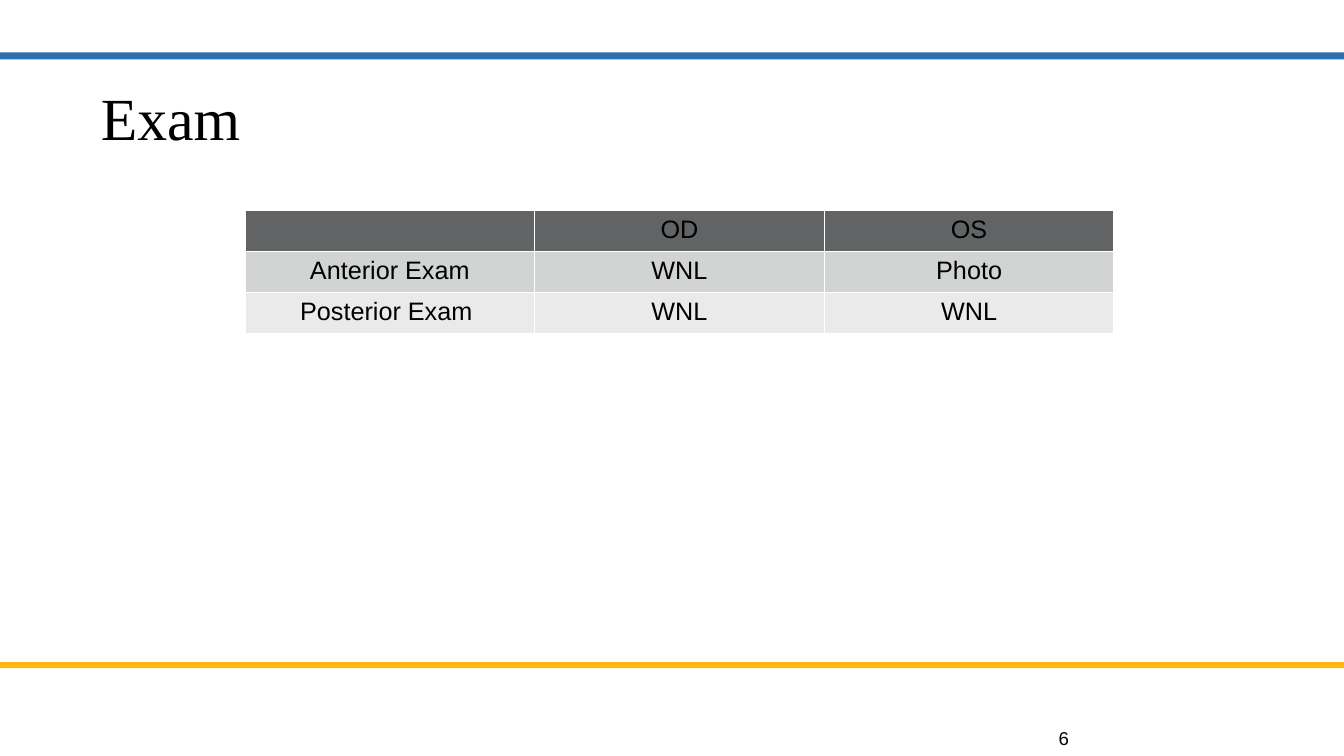
"""Build the Exam slide: two rules, a title, a findings table and a page number."""
import pptx
import pptx.dml.color
import pptx.enum.shapes
import pptx.enum.text
import pptx.oxml
import pptx.oxml.ns
import pptx.util

THEME = {
    "blue": "2B70AE", "gold": "FFB612", "text": "000000", "line": "FFFFFF",
    "rows": ["616365", "D2D3D3", "EAEAEA"],
    "title": {"name": "Times New Roman", "size": pptx.util.Pt(42.7)},
    "body": {"name": "Arial", "size": pptx.util.Pt(18)},
    "number": {"name": "Arial", "size": pptx.util.Pt(13.3)},
}
ANCHOR = pptx.enum.text.MSO_ANCHOR
RGB = pptx.dml.color.RGBColor.from_string


def write(p, text, style):
    r = p.add_run()
    r.text = text
    for name, value in THEME[style].items():
        setattr(r.font, name, value)
    r.font.color.rgb = RGB(THEME["text"])


prs = pptx.Presentation()
prs.slide_width = pptx.util.Inches(13.33)
prs.slide_height = pptx.util.Inches(7.5)
s = prs.slides.add_slide(prs.slide_layouts[6])

for top, height, color in [(6.57, 0.06, "gold"), (0.52, 0.07, "blue")]:
    sp = s.shapes.add_shape(pptx.enum.shapes.MSO_SHAPE.RECTANGLE, 0, pptx.util.Inches(top),
                            prs.slide_width, pptx.util.Inches(height))
    sp.shadow.inherit = False
    sp.fill.solid()
    sp.fill.fore_color.rgb = RGB(THEME[color])
    sp.line.fill.background()

for text, style, anchor, box in [
    ("Exam", "title", ANCHOR.BOTTOM, (1, 0.65, 11.33, 0.86)),
    ("6", "number", ANCHOR.MIDDLE, (10.5, 7.16, 2.67, 0.32)),
]:
    tf = s.shapes.add_textbox(*map(pptx.util.Inches, box)).text_frame
    frame = {"word_wrap": True, "vertical_anchor": anchor, "margin_left": 0,
             "margin_top": 0, "margin_right": 0, "margin_bottom": 0}
    for name, value in frame.items():
        setattr(tf, name, value)
    write(tf.paragraphs[0], text, style)

findings = [
    ["", "OD", "OS"],
    ["Anterior Exam", "WNL", "Photo"],
    ["Posterior Exam ", "WNL", "WNL"],
]
col_width, row_height = pptx.util.Inches(2.873), pptx.util.Inches(0.406)
table = s.shapes.add_table(3, 3, pptx.util.Inches(2.43), pptx.util.Inches(2.09),
                           3 * col_width, 3 * row_height).table
for row, texts, fill in zip(table.rows, findings, THEME["rows"]):
    for cell, text in zip(row.cells, texts):
        cell.fill.solid()
        cell.fill.fore_color.rgb = RGB(fill)
        p = cell.text_frame.paragraphs[0]
        p.alignment = pptx.enum.text.PP_ALIGN.CENTER
        p.font.size = THEME["body"]["size"]
        if text:
            write(p, text, "body")
        tcPr = cell._tc.get_or_add_tcPr()
        for i, side in enumerate("LRTB"):
            tcPr.insert(i, pptx.oxml.parse_xml(
                f'<a:ln{side} {pptx.oxml.ns.nsdecls("a")} w="12700"><a:solidFill>'
                f'<a:srgbClr val="{THEME["line"]}"/></a:solidFill></a:ln{side}>'))

prs.save("out.pptx")
